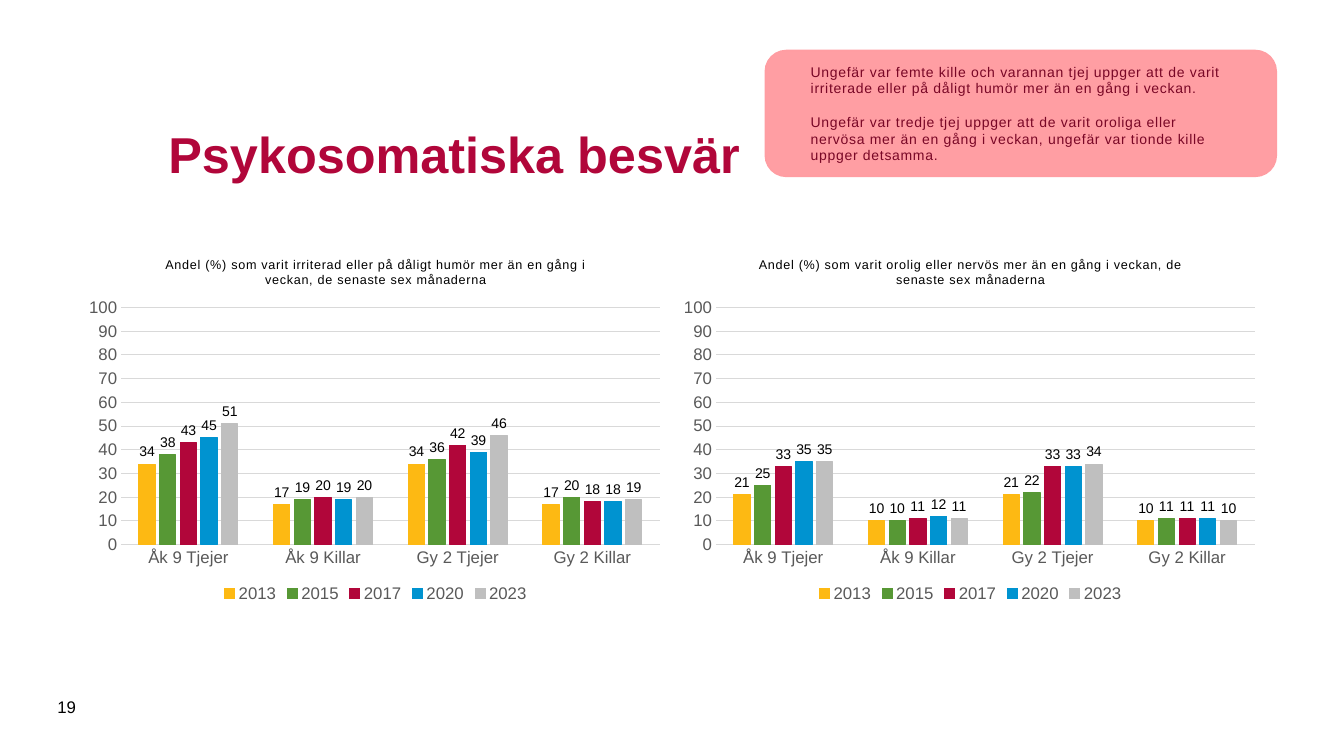
from lxml import etree
from pptx import Presentation
from pptx.chart.data import CategoryChartData
from pptx.dml.color import RGBColor
from pptx.enum.chart import XL_CHART_TYPE, XL_LABEL_POSITION, XL_LEGEND_POSITION, XL_TICK_MARK
from pptx.enum.shapes import MSO_SHAPE
from pptx.enum.text import MSO_ANCHOR, PP_ALIGN
from pptx.oxml.ns import qn
from pptx.util import Inches, Pt

CLUSTERED = XL_CHART_TYPE.COLUMN_CLUSTERED
OUTSIDE_END = XL_LABEL_POSITION.OUTSIDE_END
BOTTOM = XL_LEGEND_POSITION.BOTTOM
NO_TICK = XL_TICK_MARK.NONE
ROUNDED = MSO_SHAPE.ROUNDED_RECTANGLE
MIDDLE = MSO_ANCHOR.MIDDLE
LEFT = PP_ALIGN.LEFT

FONT = "Arial"
BLACK, GREY, GRID = "000000", "595959", "D9D9D9"
CRIMSON, DARK_RED, PINK = "B1063A", "790726", "FF9DA2"
NUMBER_FORMAT = "#,##0;#,##0"
YEAR_COLOURS = {"2013": "FDB913", "2015": "579835", "2017": CRIMSON, "2020": "0093D0", "2023": "BFBFBF"}
GROUPS = ["Åk 9 Tjejer", "Åk 9 Killar", "Gy 2 Tjejer", "Gy 2 Killar"]
PLOT_LAYOUT = {"layoutTarget": "inner", "xMode": "edge", "yMode": "edge",
               "x": 0.07, "y": 0.18, "w": 0.91, "h": 0.65}

CHARTS = [
    ("Andel (%) som varit irriterad eller på dåligt humör mer än en gång i veckan, de senaste sex månaderna",
     [(34, 17, 34, 17), (38, 19, 36, 20), (43, 20, 42, 18), (45, 19, 39, 18), (51, 20, 46, 19)]),
    ("Andel (%) som varit orolig eller nervös mer än en gång i veckan, de senaste sex månaderna",
     [(21, 10, 21, 10), (25, 10, 22, 11), (33, 11, 33, 11), (35, 12, 33, 11), (35, 11, 34, 10)]),
]
FINDINGS = [
    "Ungefär var femte kille och varannan tjej uppger att de varit irriterade eller på dåligt humör "
    "mer än en gång i veckan.",
    "Ungefär var tredje tjej uppger att de varit oroliga eller nervösa mer än en gång i veckan, "
    "ungefär var tionde kille uppger detsamma.",
]


def colour(value):
    return RGBColor.from_string(value)


class SurveySlide:
    def __init__(self, presentation):
        self.width = presentation.slide_width
        self.height = presentation.slide_height
        self.slide = presentation.slides.add_slide(presentation.slide_layouts[5])

    def place(self, left, top, width, height):
        return (int(self.width * left / 100), int(self.height * top / 100),
                int(self.width * width / 100), int(self.height * height / 100))

    def style(self, font, size, fill, bold=False):
        font.name = FONT
        font.size = Pt(size)
        font.bold = bold
        font.color.rgb = colour(fill)

    def outline(self, line, fill, width=0.75):
        line.color.rgb = colour(fill)
        line.width = Pt(width)

    def set_text(self, paragraph, text, size, fill, bold=False, spacing=0):
        paragraph.text = text
        paragraph.alignment = LEFT
        for run in paragraph.runs:
            self.style(run.font, size, fill, bold)
            if spacing:
                run.font._element.set("spc", str(spacing))

    def title(self, text, *area):
        shape = self.slide.shapes.title
        shape.left, shape.top, shape.width, shape.height = self.place(*area)
        shape.text_frame.vertical_anchor = MIDDLE
        self.set_text(shape.text_frame.paragraphs[0], text, 36, CRIMSON, bold=True)

    def label(self, text, *area):
        frame = self.slide.shapes.add_textbox(*self.place(*area)).text_frame
        frame.word_wrap = True
        frame.vertical_anchor = MIDDLE
        self.set_text(frame.paragraphs[0], text, 12, BLACK)

    def callout(self, texts, *area):
        shape = self.slide.shapes.add_shape(ROUNDED, *self.place(*area))
        shape.shadow.inherit = False
        shape.fill.solid()
        shape.fill.fore_color.rgb = colour(PINK)
        fill_colour = shape._element.spPr.find(qn("a:solidFill"))[0]
        etree.SubElement(fill_colour, qn("a:alpha")).set("val", "98000")
        self.outline(shape.line, PINK, 1)
        frame = shape.text_frame
        frame.word_wrap = True
        frame.vertical_anchor = MIDDLE
        frame.margin_left = frame.margin_right = Inches(0.39)
        frame.margin_top = frame.margin_bottom = Inches(0.2)
        for index, text in enumerate(texts):
            paragraph = frame.add_paragraph() if index else frame.paragraphs[0]
            self.set_text(paragraph, text, 10, DARK_RED, spacing=50)
            paragraph.line_spacing = Pt(12)
            paragraph.space_before = Pt(12 if index else 0)

    def chart(self, heading, rows, *area):
        data = CategoryChartData()
        data.categories = GROUPS
        for year, values in zip(YEAR_COLOURS, rows):
            data.add_series(year, values)
        chart = self.slide.shapes.add_chart(CLUSTERED, *self.place(*area), data).chart
        self.style(chart.font, 10, BLACK)
        chart.has_title = True
        paragraph = chart.chart_title.text_frame.paragraphs[0]
        paragraph.text = heading
        self.style(paragraph.runs[0].font, 9, BLACK)
        paragraph.runs[0].font._element.set("spc", "50")
        chart.chart_title.include_in_layout = False
        chart.has_legend = True
        chart.legend.position = BOTTOM
        chart.legend.include_in_layout = False
        self.style(chart.legend.font, 12, GREY)
        self.axes(chart)
        self.bars(chart.plots[0])
        self.plot_layout(chart)

    def axes(self, chart):
        for axis in (chart.category_axis, chart.value_axis):
            axis.major_tick_mark = axis.minor_tick_mark = NO_TICK
            self.style(axis.tick_labels.font, 12, GREY)
        self.outline(chart.category_axis.format.line, GRID)
        values = chart.value_axis
        values.minimum_scale, values.maximum_scale, values.major_unit = 0, 100, 10
        values.format.line.fill.background()
        values.tick_labels.number_format = NUMBER_FORMAT
        values.tick_labels.number_format_is_linked = False
        self.outline(values.major_gridlines.format.line, GRID)

    def bars(self, plot):
        plot.gap_width = 219
        plot.overlap = -27
        plot.vary_by_categories = False
        for series, fill in zip(plot.series, YEAR_COLOURS.values()):
            series.format.fill.solid()
            series.format.fill.fore_color.rgb = colour(fill)
            self.outline(series.format.line, fill)
            labels = series.data_labels
            labels.show_value = True
            labels.position = OUTSIDE_END
            labels.number_format = NUMBER_FORMAT
            labels.number_format_is_linked = False
            self.style(labels.font, 10, BLACK)

    def plot_layout(self, chart):
        plot_area = chart._chartSpace.chart.plotArea
        layout = plot_area.find(qn("c:layout"))
        if layout is None:
            layout = etree.Element(qn("c:layout"))
            plot_area.insert(0, layout)
        manual = etree.SubElement(layout, qn("c:manualLayout"))
        for tag, value in PLOT_LAYOUT.items():
            etree.SubElement(manual, qn(f"c:{tag}")).set("val", str(value))


def main():
    presentation = Presentation()
    presentation.slide_width = Inches(13.33)
    presentation.slide_height = Inches(7.5)
    survey = SurveySlide(presentation)
    survey.title("Psykosomatiska besvär", 11.78, 10.8, 76.82, 18.93)
    for index, (heading, rows) in enumerate(CHARTS):
        survey.chart(heading, rows, 5.93 + index * 44.26, 32, 44.04, 48.27)
    survey.label("19", 3.53, 90.8, 4.28, 5.33)
    survey.callout(FINDINGS, 56.94, 6.67, 38.03, 16.67)
    presentation.save("out.pptx")


if __name__ == "__main__":
    main()
